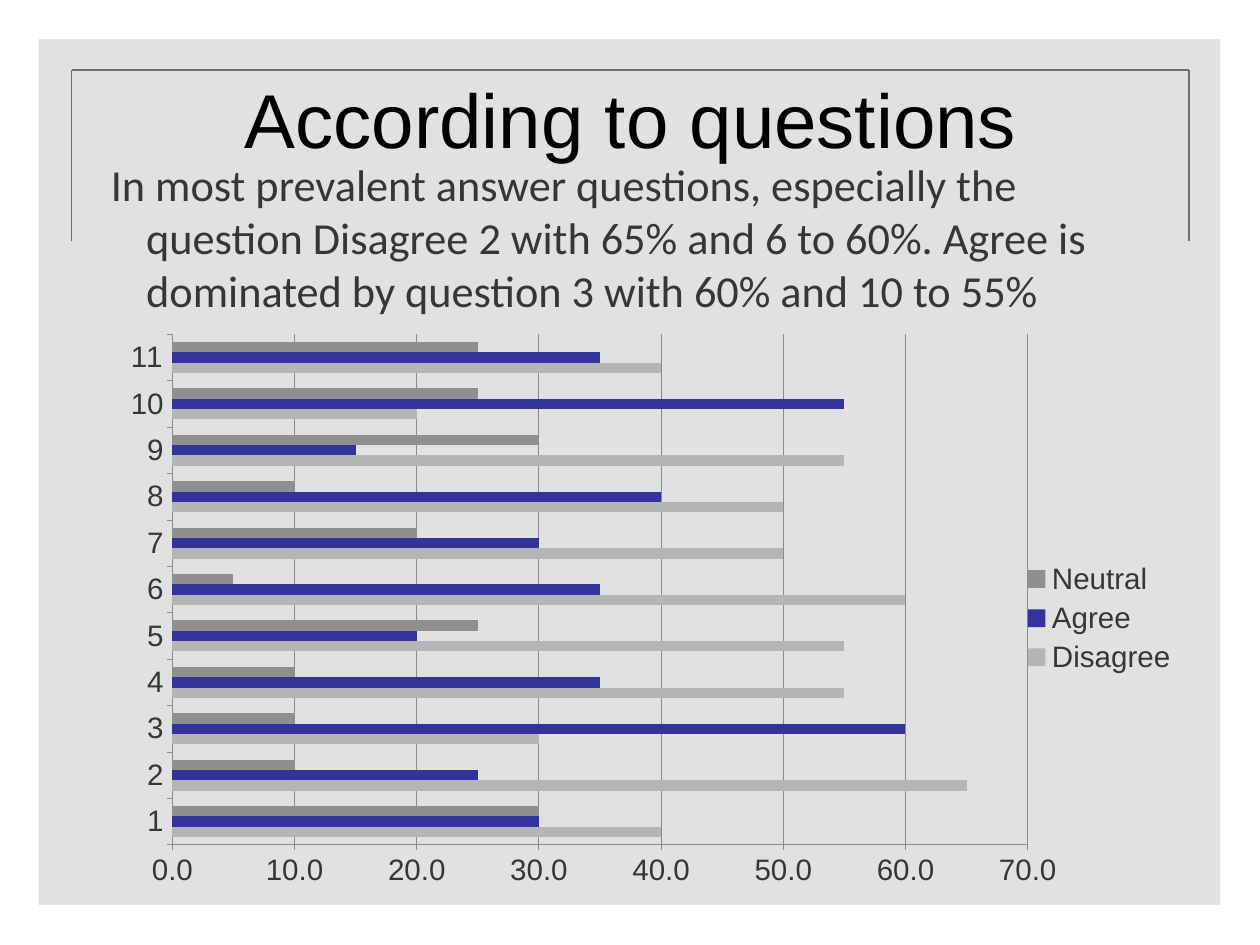
from dataclasses import dataclass

from pptx import Presentation
from pptx import oxml
from pptx.chart import data as chart_data
from pptx.dml import color
from pptx.enum import chart as chart_enum
from pptx.enum import shapes, text
from pptx.oxml import ns
from pptx.util import Inches, Pt


@dataclass(frozen=True)
class Theme:
    font: str = "Arial"
    body_font: str = "Calibri"
    title_size: int = 62
    body_size: int = 36
    chart_size: int = 24
    title_color: str = "000000"
    text_color: str = "363636"
    panel: str = "B5B5B7"
    frame: str = "6D6D6D"
    grid: str = "8B8B8B"
    disagree: str = "B5B5B7"
    agree: str = "333399"
    neutral: str = "8F8F8F"


THEME = Theme()
BODY = (
    "In most prevalent answer questions, especially the question Disagree 2 "
    "with 65% and 6 to 60%. Agree is dominated by question 3 with 60% and 10 to 55%"
)
ANSWERS = [
    ("Disagree", THEME.disagree, (40, 65, 30, 55, 55, 60, 50, 50, 55, 20, 40)),
    ("Agree", THEME.agree, (30, 25, 60, 35, 20, 35, 30, 40, 15, 55, 35)),
    ("Neutral", THEME.neutral, (30, 10, 10, 10, 25, 5, 20, 10, 30, 25, 25)),
]


def rgb(value):
    return color.RGBColor.from_string(value)


def place(shape, left, top, width, height):
    shape.left, shape.top = Inches(left), Inches(top)
    shape.width, shape.height = Inches(width), Inches(height)


def style_font(font, name, size, value):
    font.name, font.size = name, Pt(size)
    font.color.rgb = rgb(value)


def style_line(line, value, width):
    line.color.rgb = rgb(value)
    line.width = Pt(width)


def add_panel(slide):
    """Add the translucent panel behind everything else."""
    panel = slide.shapes.add_shape(
        shapes.MSO_SHAPE.RECTANGLE,
        Inches(0.44), Inches(0.44), Inches(13.33), Inches(9.78),
    )
    panel.shadow.inherit = False
    panel.fill.solid()
    panel.fill.fore_color.rgb = rgb(THEME.panel)
    panel.line.fill.background()
    fill_color = panel.element.xpath("p:spPr/a:solidFill/a:srgbClr")[0]
    oxml.parse_xml  # alpha is a child of the fill colour
    fill_color.append(oxml.parse_xml(f'<a:alpha {ns.nsdecls("a")} val="40000"/>'))
    slide.shapes.element.insert(2, panel.element)


def add_frame_line(slide, x1, y1, x2, y2):
    line = slide.shapes.add_connector(
        shapes.MSO_CONNECTOR.STRAIGHT, Inches(x1), Inches(y1), Inches(x2), Inches(y2)
    )
    style_line(line.line, THEME.frame, 1)
    properties = line.element.xpath("p:spPr")[0]
    properties.append(oxml.parse_xml(f'<a:effectLst {ns.nsdecls("a")}/>'))


def fill_title(title, wording):
    place(title, 1.15, 0.38, 11.94, 1.69)
    frame = title.text_frame
    frame.text = wording
    frame.word_wrap = True
    frame.auto_size = text.MSO_AUTO_SIZE.NONE
    frame.vertical_anchor = text.MSO_ANCHOR.MIDDLE
    frame.margin_left = frame.margin_right = frame.margin_top = frame.margin_bottom = 0
    paragraph = frame.paragraphs[0]
    paragraph.alignment = text.PP_ALIGN.CENTER
    paragraph.line_spacing = 1.2
    paragraph.space_before = Pt(0)
    style_font(paragraph.font, THEME.font, THEME.title_size, THEME.title_color)


def fill_body(body, wording):
    """Set one paragraph with a hanging indent and no bullet."""
    place(body, 1.15, 1.72, 11.94, 2.02)
    frame = body.text_frame
    frame.text = wording
    frame.word_wrap = True
    frame.auto_size = text.MSO_AUTO_SIZE.NONE
    frame.vertical_anchor = text.MSO_ANCHOR.TOP
    paragraph = frame.paragraphs[0]
    properties = paragraph._p.get_or_add_pPr()
    properties.set("marL", str(Inches(0.4)))
    properties.set("indent", str(-Inches(0.4)))
    properties.append(oxml.parse_xml(f'<a:buNone {ns.nsdecls("a")}/>'))
    paragraph.space_before = Pt(0)
    style_font(paragraph.font, THEME.body_font, THEME.body_size, THEME.text_color)


def set_plot_layout(chart, x, y, w, h):
    """Fix the inner plot area, in fractions of the chart."""
    plot_area = chart.element.xpath("c:chart/c:plotArea")[0]
    for layout in plot_area.xpath("c:layout"):
        plot_area.remove(layout)
    settings = {
        "layoutTarget": "inner", "xMode": "edge", "yMode": "edge",
        "x": x, "y": y, "w": w, "h": h,
    }
    parts = "".join(f'<c:{name} val="{value}"/>' for name, value in settings.items())
    plot_area.insert(0, oxml.parse_xml(
        f'<c:layout {ns.nsdecls("c")}><c:manualLayout>{parts}</c:manualLayout></c:layout>'
    ))


def add_answer_chart(slide):
    answers = chart_data.CategoryChartData()
    answers.categories = [str(question) for question in range(1, 12)]
    for name, _, values in ANSWERS:
        answers.add_series(name, values)
    chart = slide.shapes.add_chart(
        chart_enum.XL_CHART_TYPE.BAR_CLUSTERED,
        Inches(1.15), Inches(3.62), Inches(12.25), Inches(6.72), answers,
    ).chart
    chart.has_title = False
    style_font(chart.font, THEME.font, THEME.chart_size, THEME.text_color)
    chart.has_legend = True
    chart.legend.position = chart_enum.XL_LEGEND_POSITION.RIGHT
    chart.legend.include_in_layout = False

    plot = chart.plots[0]
    plot.gap_width = 150
    plot.vary_by_categories = False
    for series, (_, fill, _) in zip(plot.series, ANSWERS):
        series.invert_if_negative = False
        series.format.fill.solid()
        series.format.fill.fore_color.rgb = rgb(fill)

    for axis in (chart.category_axis, chart.value_axis):
        axis.major_tick_mark = chart_enum.XL_TICK_MARK.OUTSIDE
        axis.minor_tick_mark = chart_enum.XL_TICK_MARK.NONE
        style_line(axis.format.line, THEME.grid, 0.75)
    chart.category_axis.has_major_gridlines = False
    percent = chart.value_axis
    percent.minimum_scale, percent.maximum_scale, percent.major_unit = 0, 70, 10
    percent.tick_labels.number_format = "0.0"
    percent.tick_labels.number_format_is_linked = False
    percent.has_major_gridlines = True
    style_line(percent.major_gridlines.format.line, THEME.grid, 0.75)
    set_plot_layout(chart, 0.065, 0.023, 0.788, 0.858)


def main():
    presentation = Presentation()
    presentation.slide_width = Inches(14.22)
    presentation.slide_height = Inches(10.67)
    slide = presentation.slides.add_slide(presentation.slide_layouts[1])
    add_panel(slide)
    left, right, top, bottom = 0.81, 13.42, 0.79, 2.72
    for x in (left, right):
        add_frame_line(slide, x, bottom, x, top)
    add_frame_line(slide, right, top, left, top)
    fill_title(slide.shapes.title, "According to questions")
    fill_body(slide.placeholders[1], BODY)
    add_answer_chart(slide)
    presentation.save("out.pptx")


if __name__ == "__main__":
    main()
